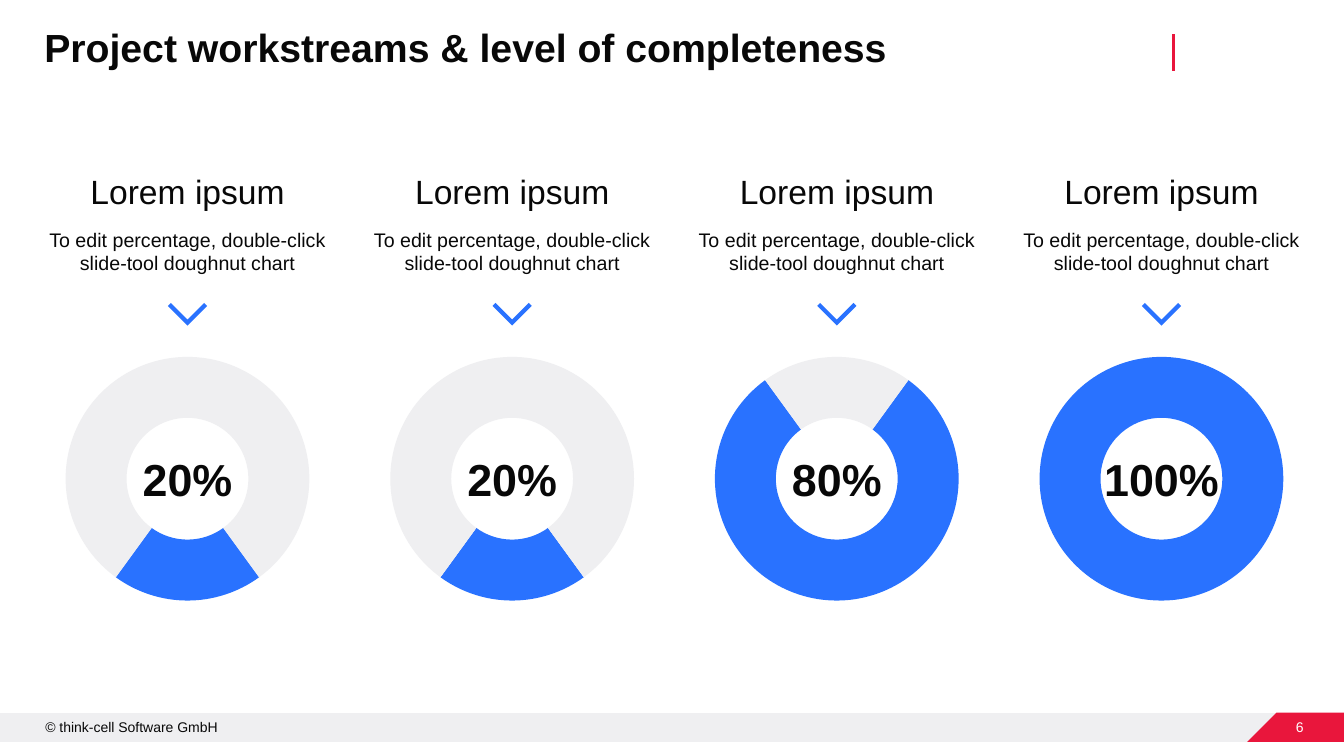
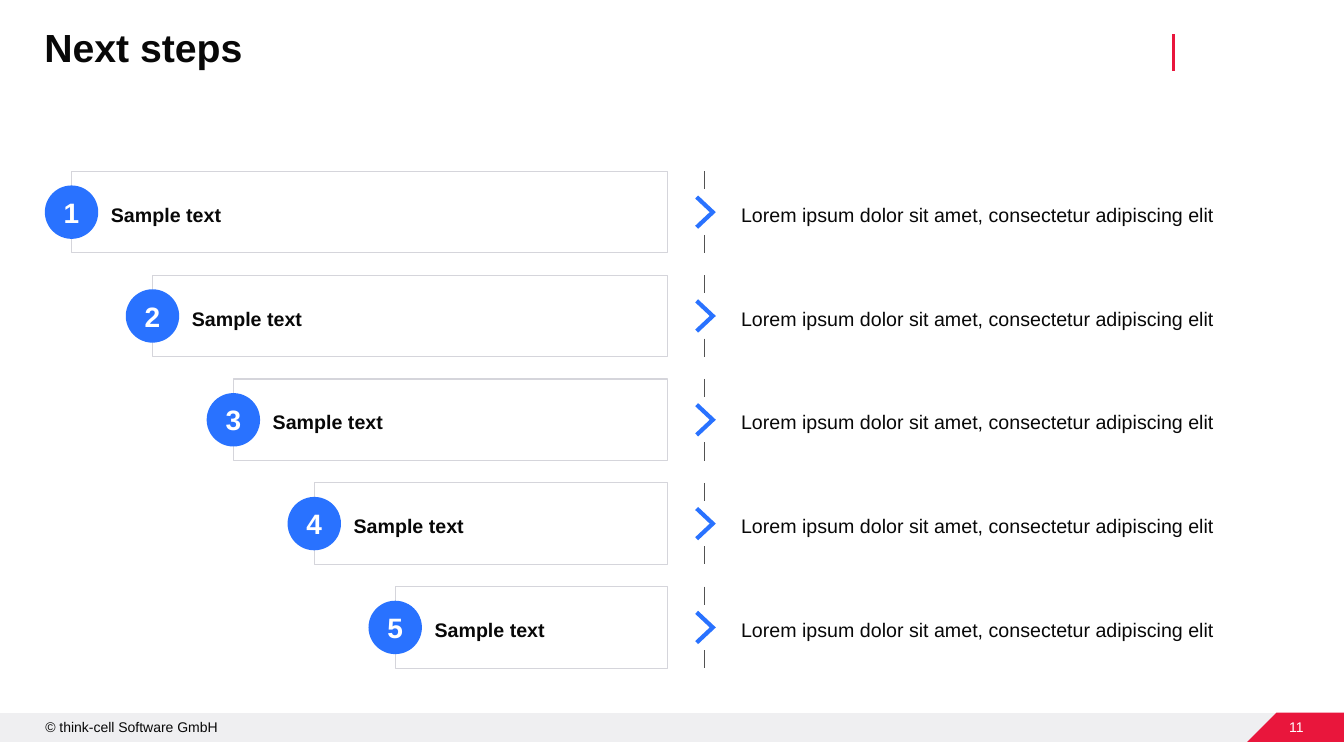
"""Build a workstream completeness slide and a next steps slide."""
from dataclasses import dataclass
from typing import Any

import lxml.etree
import pptx
import pptx.chart.data
import pptx.dml.color
import pptx.enum.chart
import pptx.enum.shapes
import pptx.enum.text
import pptx.oxml.ns
import pptx.slide
import pptx.util

Inches = pptx.util.Inches
Pt = pptx.util.Pt
qn = pptx.oxml.ns.qn
Align = pptx.enum.text.PP_ALIGN
Anchor = pptx.enum.text.MSO_ANCHOR
Preset = pptx.enum.shapes.MSO_SHAPE
Slide = pptx.slide.Slide
Point = tuple[float, float]
Box = tuple[float, float, float, float]

FONT = "Arial"
INK = "080808"
WHITE = "FFFFFF"
BLUE = "2972FF"
RED = "E9163C"
PALE = "EFEFF1"
BORDER = "D5D5DB"
TICK = "525252"

SLIDE_WIDTH = 13.33
FOOTER_TOP = 7.07
FOOTER_BOTTOM = 7.36

COLUMN_CENTER = 1.86
COLUMN_PITCH = 3.22
CAPTION_WIDTH = 2.82
DONUT_WIDTH = 3.01
DONUT_HEIGHT = 2.6
DONUT_TOP = 3.45

ROW_TOP = 1.7
ROW_PITCH = 1.03
ROW_HEIGHT = 0.81
FIRST_LEFT = 0.71
LAST_LEFT = 3.92
PANEL_RIGHT = 6.62
BADGE_SIZE = 0.53
DIVIDER_X = 6.99


@dataclass(frozen=True)
class TextStyle:
    """Hold the look of a block of text."""
    size: float
    color: str = INK
    bold: bool = False
    align: Any = Align.LEFT
    anchor: Any = Anchor.TOP
    spacing: float = 1.0
    after: float = 0
    insets: Box = (0, 0, 0, 0)
    wrap: bool = True


@dataclass(frozen=True)
class Workstream:
    """Hold one workstream and its share of work done."""
    name: str
    caption: str
    percent: int


@dataclass(frozen=True)
class Step:
    """Hold one next step."""
    label: str
    detail: str


TITLE = TextStyle(28, bold=True, spacing=0.9)
COPYRIGHT = TextStyle(10)
PAGE_NUMBER = TextStyle(10, WHITE, align=Align.RIGHT, anchor=Anchor.MIDDLE, wrap=False)
HEADING = TextStyle(24, align=Align.CENTER, after=6)
CAPTION = TextStyle(14, align=Align.CENTER, after=12)
PERCENT = TextStyle(32, bold=True, align=Align.CENTER, anchor=Anchor.MIDDLE, wrap=False)
STEP_LABEL = TextStyle(14, bold=True, anchor=Anchor.MIDDLE, spacing=1.2,
                       insets=(0.39, 0.08, 0.08, 0.08))
STEP_NUMBER = TextStyle(20, WHITE, True, Align.CENTER, Anchor.MIDDLE,
                        insets=(0.08, 0, 0.08, 0))
STEP_DETAIL = TextStyle(14, anchor=Anchor.MIDDLE, spacing=1.2)

HINT = "To edit percentage, double-click slide-tool doughnut chart"
WORKSTREAMS = [Workstream("Lorem ipsum", HINT, percent) for percent in (20, 20, 80, 100)]
STEPS = [Step("Sample text", "Lorem ipsum dolor sit amet, consectetur adipiscing elit")] * 5


def rgb(value: str) -> pptx.dml.color.RGBColor:
    """Turn a hex string into a colour."""
    return pptx.dml.color.RGBColor.from_string(value)


def paint(target: Any, fill: str | None = None, line: str | None = None,
          width: float = 0.75) -> None:
    """Set fill and outline, leaving out what is not given."""
    if fill:
        target.fill.solid()
        target.fill.fore_color.rgb = rgb(fill)
    else:
        target.fill.background()
    if line:
        target.line.color.rgb = rgb(line)
        target.line.width = Pt(width)
    else:
        target.line.fill.background()


def write(shape: Any, text: str, style: TextStyle) -> None:
    """Write one styled paragraph into a shape."""
    frame = shape.text_frame
    frame.word_wrap = style.wrap
    frame.vertical_anchor = style.anchor
    (frame.margin_left, frame.margin_top,
     frame.margin_right, frame.margin_bottom) = map(Inches, style.insets)
    paragraph = frame.paragraphs[0]
    paragraph.alignment = style.align
    paragraph.line_spacing = style.spacing
    paragraph.space_after = Pt(style.after)
    run = paragraph.add_run()
    run.text = text
    run.font.name = FONT
    run.font.size = Pt(style.size)
    run.font.bold = style.bold
    run.font.color.rgb = rgb(style.color)


def add_text(slide: Slide, box: Box, text: str, style: TextStyle) -> None:
    """Add a text box."""
    write(slide.shapes.add_textbox(*map(Inches, box)), text, style)


def add_preset(slide: Slide, preset: Any, box: Box, text: str, style: TextStyle,
               fill: str | None = None, line: str | None = None) -> None:
    """Add a preset shape with text."""
    shape = slide.shapes.add_shape(preset, *map(Inches, box))
    shape.shadow.inherit = False
    paint(shape, fill, line)
    write(shape, text, style)


def add_outline(slide: Slide, points: list[Point], closed: bool) -> Any:
    """Add a freeform through the points."""
    corners = [(Inches(x), Inches(y)) for x, y in points]
    builder = slide.shapes.build_freeform(*corners[0])
    builder.add_line_segments(corners[1:], close=closed)
    shape = builder.convert_to_shape()
    shape.shadow.inherit = False
    return shape


def add_band(slide: Slide, points: list[Point], fill: str) -> None:
    """Add a filled outline."""
    paint(add_outline(slide, points, True), fill)


def add_chevron(slide: Slide, points: list[Point]) -> None:
    """Add an open blue chevron with a sharp tip."""
    chevron = add_outline(slide, points, False)
    paint(chevron, line=BLUE, width=3)
    outline = chevron.line._get_or_add_ln()
    lxml.etree.SubElement(outline, qn("a:miter"), lim="800000")


def add_vertical(slide: Slide, x: float, top: float, bottom: float,
                 color: str, width: float) -> None:
    """Add a vertical line."""
    rule = slide.shapes.add_connector(
        pptx.enum.shapes.MSO_CONNECTOR.STRAIGHT,
        Inches(x), Inches(top), Inches(x), Inches(bottom))
    rule.line.color.rgb = rgb(color)
    rule.line.width = Pt(width)
    lxml.etree.SubElement(rule._element.spPr, qn("a:effectLst"))


def add_donut(slide: Slide, box: Box, percent: int) -> None:
    """Add a doughnut whose done share is centred at the bottom."""
    figures = pptx.chart.data.CategoryChartData()
    figures.categories = ["1", "2"]
    figures.add_series("Series 1", (percent, 100 - percent))
    chart = slide.shapes.add_chart(
        pptx.enum.chart.XL_CHART_TYPE.DOUGHNUT, *map(Inches, box), figures).chart
    chart.has_legend = False
    chart.has_title = False
    chart.font.name = FONT
    chart.font.size = Pt(10)
    chart.font.color.rgb = rgb(INK)
    plot = chart.plots[0]
    plot.vary_by_categories = True
    for index, color in enumerate((BLUE, PALE)):
        paint(plot.series[0].points[index].format, color)

    ring = plot._element
    ring.find(qn("c:firstSliceAng")).set("val", str(180 - percent * 9 // 5))
    ring.find(qn("c:holeSize")).set("val", "90")
    area = ring.getparent()
    layout = area.find(qn("c:layout"))
    if layout is None:
        layout = lxml.etree.Element(qn("c:layout"))
        area.insert(0, layout)
    manual = lxml.etree.SubElement(layout, qn("c:manualLayout"))
    settings = {"layoutTarget": "inner", "xMode": "edge", "yMode": "edge",
                "x": "0.03", "y": "0.035", "w": "0.94", "h": "0.93"}
    for key, value in settings.items():
        lxml.etree.SubElement(manual, qn(f"c:{key}"), val=value)


def add_base(deck: Any, title: str, number: int) -> Slide:
    """Add a slide with the shared title, accent and footer."""
    slide = deck.slides.add_slide(deck.slide_layouts[6])
    add_band(slide, [(0, FOOTER_TOP), (SLIDE_WIDTH, FOOTER_TOP),
                     (SLIDE_WIDTH, FOOTER_BOTTOM), (0, FOOTER_BOTTOM)], PALE)
    add_text(slide, (0.45, 7.13, 2.46, 0.17), "© think-cell Software GmbH", COPYRIGHT)
    add_vertical(slide, 11.64, 0.34, 0.7, RED, 2.25)
    add_band(slide, [(12.66, FOOTER_TOP), (SLIDE_WIDTH, FOOTER_TOP),
                     (SLIDE_WIDTH, FOOTER_BOTTOM), (12.37, FOOTER_BOTTOM)], RED)
    add_text(slide, (12.76, 7.13, 0.17, 0.17), str(number), PAGE_NUMBER)
    add_text(slide, (0.44, 0.28, 11.03, 0.42), title, TITLE)
    return slide


def add_workstream(slide: Slide, center: float, stream: Workstream) -> None:
    """Add one workstream column."""
    left = center - CAPTION_WIDTH / 2
    add_text(slide, (left, 1.7, CAPTION_WIDTH, 0.4), stream.name, HEADING)
    add_text(slide, (left, 2.26, CAPTION_WIDTH, 0.47), stream.caption, CAPTION)
    add_chevron(slide, [(center - 0.18, 3.02), (center, 3.2), (center + 0.18, 3.02)])
    add_donut(slide, (center - DONUT_WIDTH / 2, DONUT_TOP, DONUT_WIDTH, DONUT_HEIGHT),
              stream.percent)
    add_text(slide, (center - 0.65, DONUT_TOP + DONUT_HEIGHT / 2 - 0.46, 1.3, 0.92),
             f"{stream.percent}%", PERCENT)


def add_step(slide: Slide, number: int, left: float, top: float, step: Step) -> None:
    """Add one step row."""
    middle = top + ROW_HEIGHT / 2
    bottom = top + ROW_HEIGHT
    add_preset(slide, Preset.RECTANGLE, (left, top, PANEL_RIGHT - left, ROW_HEIGHT),
               step.label, STEP_LABEL, line=BORDER)
    add_preset(slide, Preset.OVAL,
               (left - BADGE_SIZE / 2, middle - BADGE_SIZE / 2, BADGE_SIZE, BADGE_SIZE),
               str(number), STEP_NUMBER, fill=BLUE)
    add_vertical(slide, DIVIDER_X, top, top + 0.18, TICK, 0.5)
    add_chevron(slide, [(DIVIDER_X - 0.08, middle - 0.15), (DIVIDER_X + 0.08, middle),
                        (DIVIDER_X - 0.08, middle + 0.15)])
    add_vertical(slide, DIVIDER_X, bottom - 0.18, bottom, TICK, 0.5)
    add_text(slide, (7.35, top, 5.57, ROW_HEIGHT), step.detail, STEP_DETAIL)


def main() -> None:
    """Build and save the deck."""
    deck = pptx.Presentation()
    deck.slide_width = Inches(SLIDE_WIDTH)
    deck.slide_height = Inches(7.5)

    progress = add_base(deck, "Project workstreams & level of completeness", 6)
    for index, stream in enumerate(WORKSTREAMS):
        add_workstream(progress, COLUMN_CENTER + index * COLUMN_PITCH, stream)

    next_steps = add_base(deck, "Next steps", 11)
    indent = (LAST_LEFT - FIRST_LEFT) / (len(STEPS) - 1)
    for index, step in enumerate(STEPS):
        add_step(next_steps, index + 1, FIRST_LEFT + index * indent,
                 ROW_TOP + index * ROW_PITCH, step)

    deck.save("out.pptx")


if __name__ == "__main__":
    main()
